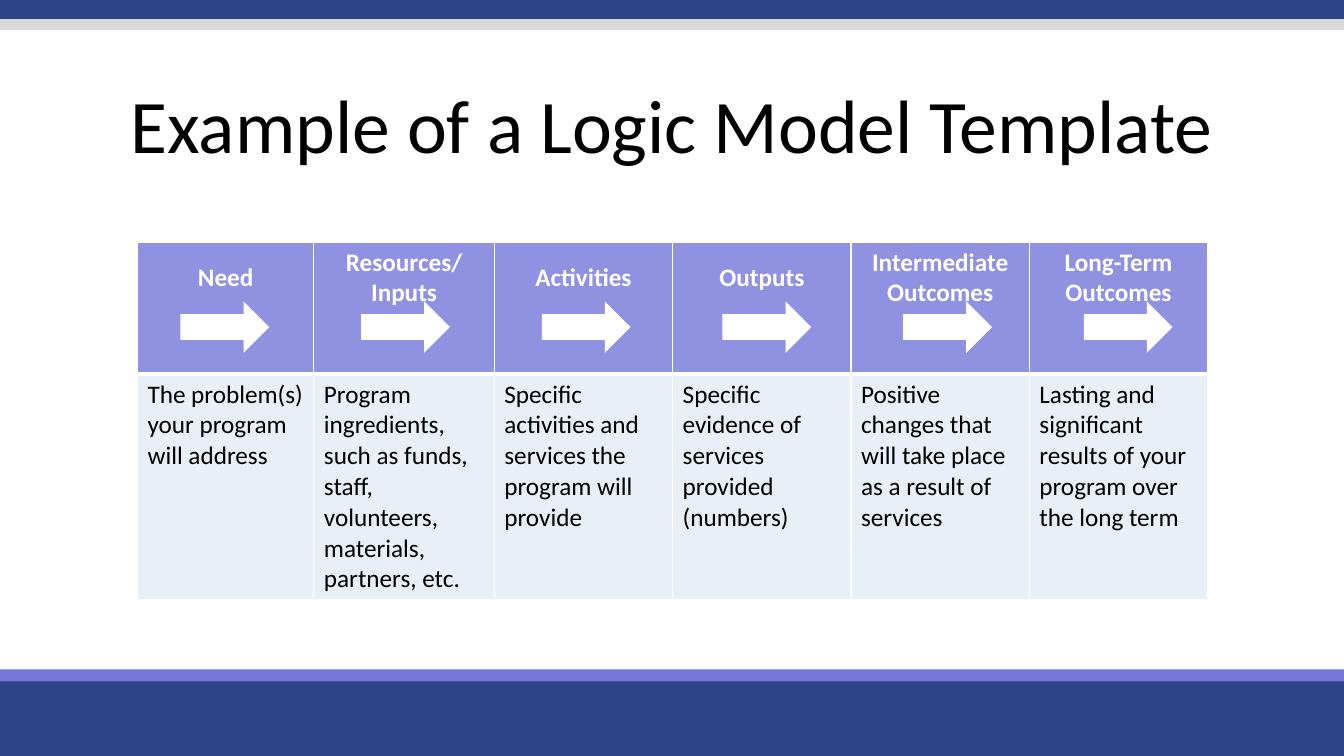
from lxml import etree
from pptx import Presentation
from pptx.dml.color import RGBColor
from pptx.enum import shapes, text
from pptx.oxml import ns
from pptx.util import Pt

WIDE, HIGH = 960, 540
FONT = "Calibri"
NAVY, VIOLET, GREY = "2E4488", "7476DA", "D9D9D9"
LILAC, PALE, WHITE, BLACK = "8F91E1", "E9EFF7", "FFFFFF", "000000"

STAGES = [
    ("Need", "The problem(s) your program will address"),
    ("Resources/ Inputs", "Program ingredients, such as funds, staff, "
     "volunteers, materials, partners, etc."),
    ("Activities", "Specific activities and services the program will provide"),
    ("Outputs", "Specific evidence of services provided (numbers)"),
    ("Intermediate Outcomes", "Positive changes that will take place "
     "as a result of services"),
    ("Long-Term Outcomes", "Lasting and significant results of your program "
     "over the long term"),
]
COLS = [126, 128.9] + [127.4] * 4
ROWS = [94.5, 161]


def paint(fill, color):
    fill.solid()
    fill.fore_color.rgb = RGBColor.from_string(color)


def add_block(slide, kind, box, color):
    block = slide.shapes.add_shape(kind, *map(Pt, box))
    block.shadow.inherit = False
    paint(block.fill, color)
    block.line.fill.background()


def write(frame, words, size, color, bold=False, align=None):
    para = frame.paragraphs[0]
    para.alignment = align
    run = para.add_run()
    run.text = words
    font = run.font
    font.name, font.size, font.bold = FONT, Pt(size), bold
    paint(font.fill, color)
    return para


def add_bands(slide, width, height):
    """Draw the full-width bars at the foot and top of the slide."""
    bands = [(height - 57.6, 57.6, NAVY), (height - 61.9, 8.6, VIOLET),
             (-2.2, 15.9, NAVY), (13.7, 7.9, GREY)]
    for top, tall, color in bands:
        add_block(slide, shapes.MSO_SHAPE.RECTANGLE,
                  (0, top, width, tall), color)


def add_title(slide, box, words):
    frame = slide.shapes.add_textbox(*map(Pt, box)).text_frame
    frame.word_wrap = True
    frame.vertical_anchor = text.MSO_ANCHOR.MIDDLE
    para = write(frame, words, 54, BLACK, align=text.PP_ALIGN.CENTER)
    para.line_spacing = 0.9


def add_edges(cell, widths):
    """Give the cell white left, right, top and bottom borders."""
    props = cell._tc.get_or_add_tcPr()
    for side, width in zip("LRTB", widths):
        edge = etree.SubElement(props, ns.qn("a:ln" + side), w=str(Pt(width)))
        fill = etree.SubElement(edge, ns.qn("a:solidFill"))
        etree.SubElement(fill, ns.qn("a:srgbClr"), val=WHITE)


def add_model(slide, left, top):
    """Place the table of stages, its heading cells leaving room for arrows."""
    box = map(Pt, (left, top, sum(COLS), sum(ROWS)))
    table = slide.shapes.add_table(len(ROWS), len(COLS), *box).table
    table.first_row = table.horz_banding = False
    for row, tall in zip(table.rows, ROWS):
        row.height = Pt(tall)
    for col, (wide, (head, body)) in enumerate(zip(COLS, STAGES)):
        table.columns[col].width = Pt(wide)
        name, note = table.cell(0, col), table.cell(1, col)
        add_edges(name, (1, 1, 1, 3))
        add_edges(note, (1, 1, 3, 1))
        paint(name.fill, LILAC)
        paint(note.fill, PALE)
        name.vertical_anchor = text.MSO_ANCHOR.MIDDLE
        name.margin_bottom = Pt(46.8)
        write(name.text_frame, head, 18, WHITE, True, text.PP_ALIGN.CENTER)
        write(note.text_frame, body, 18, BLACK)


def add_arrows(slide, left, top, step):
    for stage in range(len(STAGES)):
        add_block(slide, shapes.MSO_SHAPE.RIGHT_ARROW,
                  (left + stage * step, top, 63.4, 36.7), WHITE)


def main():
    deck = Presentation()
    deck.slide_width, deck.slide_height = Pt(WIDE), Pt(HIGH)
    slide = deck.slides.add_slide(deck.slide_layouts[6])
    left, top = 98.2, 172.8
    add_bands(slide, WIDE, HIGH)
    add_title(slide, (0, 49.7, WIDE, 85), "Example of a Logic Model Template")
    add_model(slide, left, top)
    add_arrows(slide, left + 30.7, top + 42.5, 129.05)
    deck.save("out.pptx")


if __name__ == "__main__":
    main()
